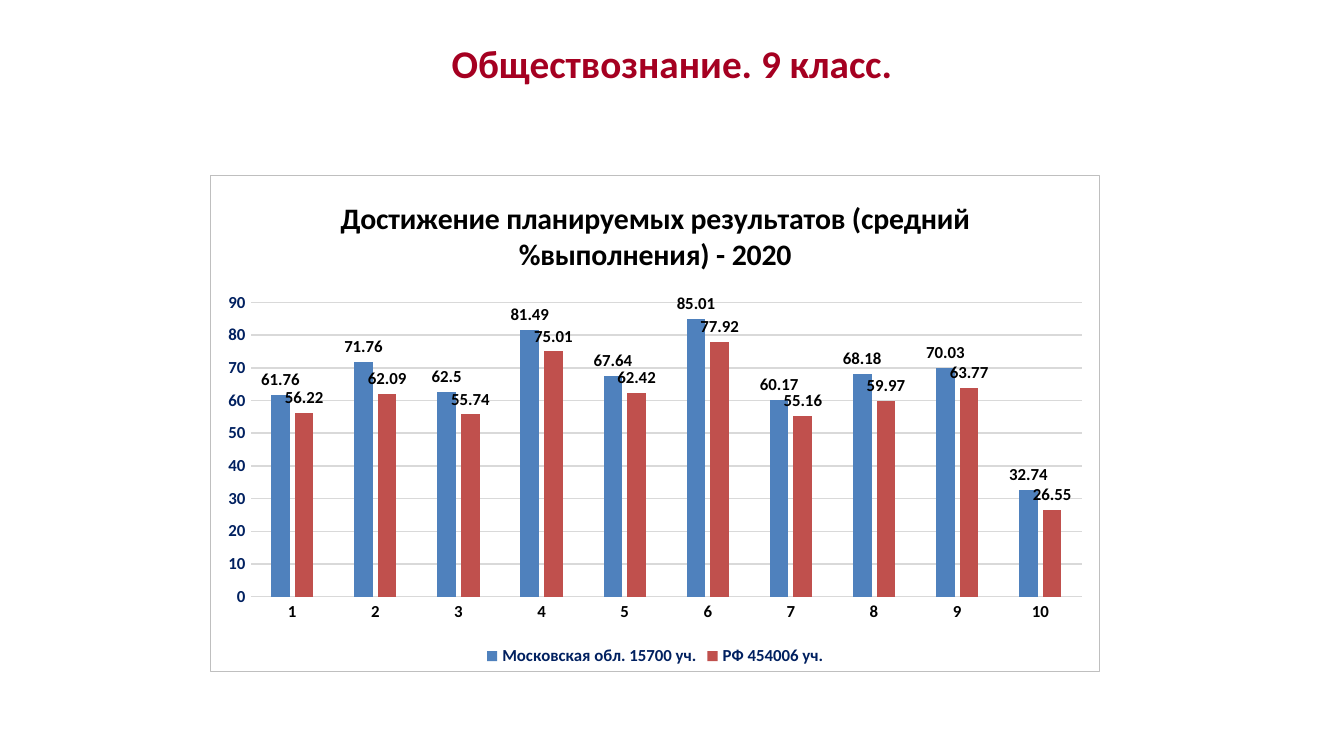
from lxml import etree
from pptx import Presentation, util as u
from pptx.chart.data import CategoryChartData
from pptx.dml.color import RGBColor
from pptx.enum import chart as ch, text
from pptx.oxml import parse_xml
from pptx.oxml.ns import nsdecls, qn

COLORS = {
    "heading": "A50021", "text": "000000", "navy": "002060",
    "grid": "D9D9D9", "border": "BFBFBF", "white": "FFFFFF",
    "region": "4F81BD", "country": "C0504D",
}
RESULTS = [
    ("Московская обл. 15700 уч.", "region",
     [61.76, 71.76, 62.5, 81.49, 67.64, 85.01, 60.17, 68.18, 70.03, 32.74]),
    ("РФ 454006 уч.", "country",
     [56.22, 62.09, 55.74, 75.01, 62.42, 77.92, 55.16, 59.97, 63.77, 26.55]),
]


def rgb(name):
    return RGBColor.from_string(COLORS[name])


class Deck:
    font = "Calibri"
    cells = 100

    def __init__(self, width):
        self.prs = Presentation()
        self.prs.slide_width = u.Inches(width)
        self.prs.slide_height = u.Inches(width * 9 / 16)
        self.s = self.prs.slides.add_slide(self.prs.slide_layouts[6])

    def box(self, x, y, w, h):
        column = self.prs.slide_width / self.cells
        row = self.prs.slide_height / self.cells
        return int(x * column), int(y * row), int(w * column), int(h * row)

    def style(self, font, size, color="text", bold=True):
        font.name, font.size, font.bold = self.font, u.Pt(size), bold
        font.color.rgb = rgb(color)

    def line(self, line, color):
        line.color.rgb, line.width = rgb(color), u.Pt(0.75)

    def heading(self, words, area):
        tf = self.s.shapes.add_textbox(*self.box(*area)).text_frame
        tf.word_wrap = True
        tf.margin_left = tf.margin_right = u.Inches(0.07)
        tf.margin_top = tf.margin_bottom = u.Inches(0.04)
        p = tf.paragraphs[0]
        p.text, p.alignment, p.line_spacing = words, text.PP_ALIGN.CENTER, 0.9
        self.style(p.font, 21, "heading")

    def columns(self, title, categories, results, area):
        data = CategoryChartData()
        data.categories = categories
        for name, _, values in results:
            data.add_series(name, values)
        chart = self.s.shapes.add_chart(
            ch.XL_CHART_TYPE.COLUMN_CLUSTERED, *self.box(*area), data).chart
        self.style(chart.font, 10, bold=False)
        self.frame(chart)

        chart.has_title = True
        p = chart.chart_title.text_frame.paragraphs[0]
        p.text = title
        self.style(p.font, 16)
        chart.chart_title.include_in_layout = False

        chart.has_legend = True
        chart.legend.position = ch.XL_LEGEND_POSITION.BOTTOM
        chart.legend.include_in_layout = False
        self.style(chart.legend.font, 9, "navy")

        self.axes(chart)
        plot = chart.plots[0]
        plot.gap_width, plot.overlap, plot.vary_by_categories = 219, -27, False
        for series, (_, color, _) in zip(plot.series, results):
            series.format.fill.solid()
            series.format.fill.fore_color.rgb = rgb(color)
            labels = series.data_labels
            labels.show_value = True
            labels.position = ch.XL_LABEL_POSITION.OUTSIDE_END
            self.style(labels.font, 9)

    def axes(self, chart):
        for axis, color in ((chart.category_axis, "text"), (chart.value_axis, "navy")):
            axis.major_tick_mark = axis.minor_tick_mark = ch.XL_TICK_MARK.NONE
            self.style(axis.tick_labels.font, 9, color)
        self.line(chart.category_axis.format.line, "grid")
        values = chart.value_axis
        values.minimum_scale, values.maximum_scale, values.major_unit = 0, 90, 10
        values.format.line.fill.background()
        self.line(values.major_gridlines.format.line, "grid")

    def frame(self, chart):
        sp = parse_xml(f"<c:spPr {nsdecls('c', 'a')}/>")
        ln = etree.SubElement(sp, qn("a:ln"), w=str(u.Pt(0.75)))
        for parent, color in ((sp, "white"), (ln, "border")):
            fill = etree.Element(qn("a:solidFill"))
            etree.SubElement(fill, qn("a:srgbClr"), val=COLORS[color])
            parent.insert(0, fill)
        chart.element.find(qn("c:chart")).addnext(sp)


def main():
    deck = Deck(10)
    deck.heading("Обществознание. 9 класс.", (0, 5.15, 100, 10))
    deck.columns("Достижение планируемых результатов (средний %выполнения) - 2020",
                 [str(n) for n in range(1, 11)], RESULTS, (15.62, 23.1, 66.25, 65.8))
    deck.prs.save("out.pptx")


if __name__ == "__main__":
    main()
